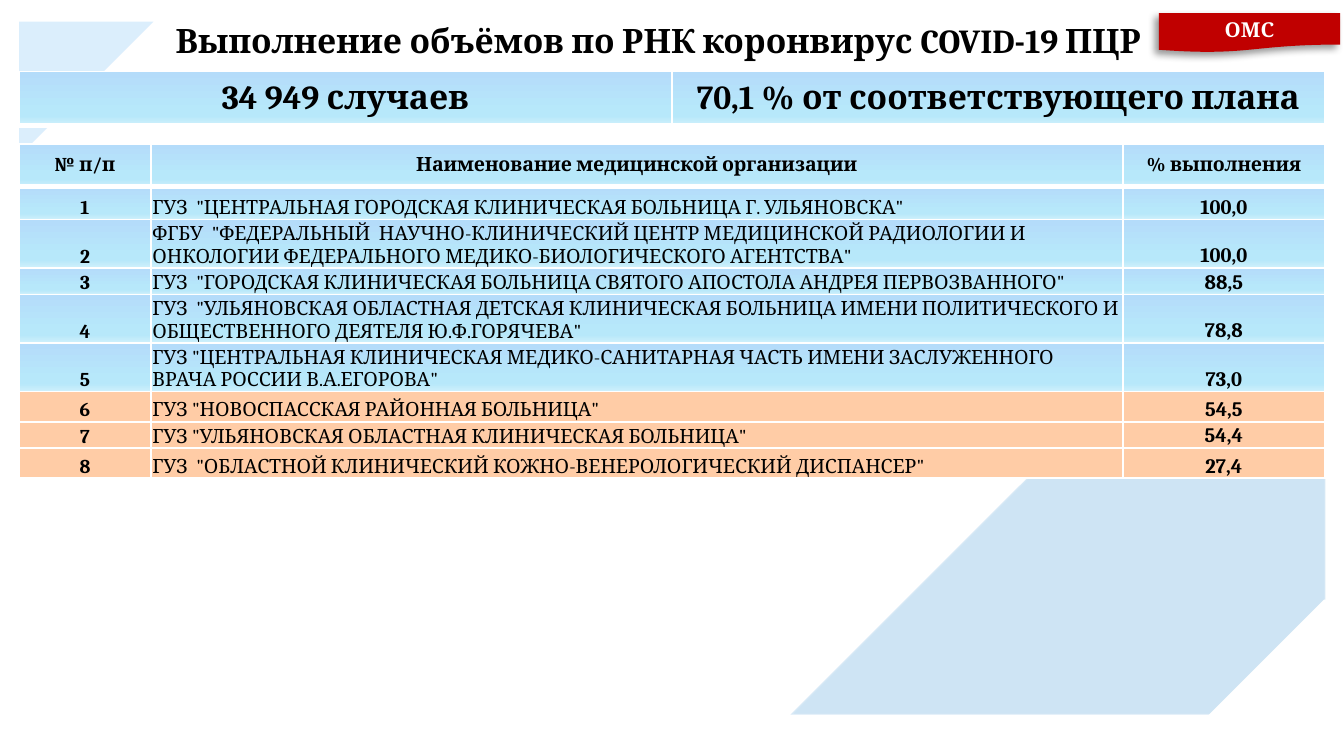
import pptx
import pptx.util
import pptx.dml.color
import pptx.enum.shapes
import pptx.enum.text
import pptx.oxml
import pptx.oxml.ns

Cm = pptx.util.Cm
SHAPE = pptx.enum.shapes.MSO_SHAPE
ANCHOR = pptx.enum.text.MSO_ANCHOR
ALIGN = pptx.enum.text.PP_ALIGN

FONT = "Cambria"
BLACK, WHITE, RED, ORANGE = "000000", "FFFFFF", "C00000", "FFCCA6"
BLUE_STOPS = [(0, "B4DCFA"), (74, "B7E8FA"), (83, "B7E8FA"), (100, "CFF0FB")]
LEFT = 0.36

TITLE = "Выполнение объёмов по РНК коронвирус COVID-19 ПЦР"
BADGE = "ОМС"
SUMMARY = ["34 949 случаев", "70,1 % от соответствующего плана"]
HEADER = ["№ п/п", "Наименование медицинской организации", "% выполнения"]
# name, percent, row height
CLINICS = [
    ('ГУЗ  "ЦЕНТРАЛЬНАЯ ГОРОДСКАЯ КЛИНИЧЕСКАЯ БОЛЬНИЦА Г. УЛЬЯНОВСКА"', "100,0", 0.62),
    ('ФГБУ  "ФЕДЕРАЛЬНЫЙ  НАУЧНО-КЛИНИЧЕСКИЙ ЦЕНТР МЕДИЦИНСКОЙ РАДИОЛОГИИ И '
     'ОНКОЛОГИИ ФЕДЕРАЛЬНОГО МЕДИКО-БИОЛОГИЧЕСКОГО АГЕНТСТВА"', "100,0", 0.91),
    ('ГУЗ  "ГОРОДСКАЯ КЛИНИЧЕСКАЯ БОЛЬНИЦА СВЯТОГО АПОСТОЛА АНДРЕЯ ПЕРВОЗВАННОГО"', "88,5", 0.48),
    ('ГУЗ  "УЛЬЯНОВСКАЯ ОБЛАСТНАЯ ДЕТСКАЯ КЛИНИЧЕСКАЯ БОЛЬНИЦА ИМЕНИ ПОЛИТИЧЕСКОГО И '
     'ОБЩЕСТВЕННОГО ДЕЯТЕЛЯ Ю.Ф.ГОРЯЧЕВА"', "78,8", 0.91),
    ('ГУЗ "ЦЕНТРАЛЬНАЯ КЛИНИЧЕСКАЯ МЕДИКО-САНИТАРНАЯ ЧАСТЬ ИМЕНИ ЗАСЛУЖЕННОГО '
     'ВРАЧА РОССИИ В.А.ЕГОРОВА"', "73,0", 0.91),
    ('ГУЗ "НОВОСПАССКАЯ РАЙОННАЯ БОЛЬНИЦА"', "54,5", 0.57),
    ('ГУЗ "УЛЬЯНОВСКАЯ ОБЛАСТНАЯ КЛИНИЧЕСКАЯ БОЛЬНИЦА"', "54,4", 0.48),
    ('ГУЗ  "ОБЛАСТНОЙ КЛИНИЧЕСКИЙ КОЖНО-ВЕНЕРОЛОГИЧЕСКИЙ ДИСПАНСЕР"', "27,4", 0.57),
]
FIRST_ORANGE = 6
# left, top, size, rotation, fill, opacity in percent, has outline
TRIANGLES = [
    (14.94, 3.4, 10.11, 270, "0D79CA", 20, True),
    (22.5, 11.35, 2.54, 270, WHITE, 100, True),
    (LEFT, 0.41, 2.54, 90, "4FADF3", 20, False),
]


def rgb(hex_color):
    return pptx.dml.color.RGBColor.from_string(hex_color)


def xml(text):
    """Parse one DrawingML element given without its namespace declaration."""
    head, rest = text.split(">", 1)
    slash = "/" if head.endswith("/") else ""
    ns = pptx.oxml.ns.nsdecls("a")
    return pptx.oxml.parse_xml(f"{head.rstrip('/')} {ns}{slash}>{rest}")


def write(tf, text, size, color=BLACK, bold=True, align=ALIGN.CENTER):
    p = tf.paragraphs[0]
    p.text = text
    p.alignment = align
    f = p.font
    f.name, f.size, f.bold = FONT, pptx.util.Pt(size), bold
    f.color.rgb = rgb(color)


def set_opacity(fill_format, percent):
    for clr in fill_format.iter(pptx.oxml.ns.qn("a:srgbClr")):
        clr.append(xml(f'<a:alpha val="{percent * 1000}"/>'))


def add_shape(shapes, kind, left, top, width, height, color):
    sp = shapes.add_shape(kind, Cm(left), Cm(top), Cm(width), Cm(height))
    sp.shadow.inherit = False
    sp.fill.solid()
    sp.fill.fore_color.rgb = rgb(color)
    sp.line.fill.background()
    return sp


def add_triangle(shapes, left, top, size, rotation, color, opacity, outlined):
    sp = add_shape(shapes, SHAPE.RIGHT_TRIANGLE, left, top, size, size, color)
    sp.rotation = rotation
    if outlined:
        sp.line.color.rgb = rgb(WHITE)
        sp.line.width = pptx.util.Pt(1.25)
    if opacity < 100:
        set_opacity(sp._element.spPr, opacity)


def add_table(shapes, top, widths, heights):
    table = shapes.add_table(len(heights), len(widths), Cm(LEFT), Cm(top),
                             Cm(sum(widths)), Cm(sum(heights))).table
    table.first_row = table.horz_banding = False
    for column, width in zip(table.columns, widths):
        column.width = Cm(width)
    for row, height in zip(table.rows, heights):
        row.height = Cm(height)
    return table


def style_cell(cell, anchor, color=None, margins=None, top=1, bottom=1):
    """Give white borders and a solid fill, or the blue gradient without a colour."""
    cell.vertical_anchor = anchor
    if margins:
        (cell.margin_left, cell.margin_top,
         cell.margin_right, cell.margin_bottom) = map(Cm, margins)
    tcPr = cell._tc.get_or_add_tcPr()
    for side, width in (("L", 1), ("R", 1), ("T", top), ("B", bottom)):
        tcPr.append(xml(f'<a:ln{side} w="{width * 12700}"><a:solidFill>'
                        f'<a:srgbClr val="{WHITE}"/></a:solidFill></a:ln{side}>'))
    if color:
        cell.fill.solid()
        cell.fill.fore_color.rgb = rgb(color)
    else:
        stops = "".join(f'<a:gs pos="{pos * 1000}"><a:srgbClr val="{c}"/></a:gs>'
                        for pos, c in BLUE_STOPS)
        tcPr.append(xml(f'<a:gradFill><a:gsLst>{stops}</a:gsLst>'
                        '<a:lin ang="5400000" scaled="0"/></a:gradFill>'))


def add_summary(shapes):
    table = add_table(shapes, 1.35, [12.34, 12.34], [1])
    for cell, text in zip(table.rows[0].cells, SUMMARY):
        write(cell.text_frame, text, 18)
        style_cell(cell, ANCHOR.MIDDLE, bottom=3)


def add_clinics(shapes):
    wide, narrow = (0.18, 0, 0.18, 0), (0.03, 0.03, 0.03, 0)
    heights = [0.81] + [height for *_, height in CLINICS]
    table = add_table(shapes, 2.72, [2.49, 18.37, 3.82], heights)
    for cell, text in zip(table.rows[0].cells, HEADER):
        write(cell.text_frame, text, 10.5)
        style_cell(cell, ANCHOR.MIDDLE, margins=wide, bottom=3)
    for i, (name, percent, _) in enumerate(CLINICS, 1):
        color = ORANGE if i >= FIRST_ORANGE else None
        number_cell, name_cell, percent_cell = table.rows[i].cells
        write(number_cell.text_frame, str(i), 10.5)
        write(name_cell.text_frame, name, 10.5, bold=False, align=ALIGN.LEFT)
        write(percent_cell.text_frame, percent, 11)
        for cell, margins in ((number_cell, wide), (name_cell, narrow), (percent_cell, narrow)):
            style_cell(cell, ANCHOR.BOTTOM, color, margins, top=3 if i == 1 else 1)


def add_title(shapes):
    tf = shapes.add_textbox(Cm(2.9), Cm(0.1), Cm(19.1), Cm(1.17)).text_frame
    tf.word_wrap = True
    tf.vertical_anchor = ANCHOR.BOTTOM
    write(tf, TITLE, 18)


def add_badge(shapes):
    sp = add_shape(shapes, SHAPE.FLOWCHART_DOCUMENT, 21.9, 0.25, 3.43, 0.74, RED)
    effects = sp._element.spPr.find(pptx.oxml.ns.qn("a:effectLst"))
    effects.append(xml('<a:outerShdw blurRad="50800" dist="38100" dir="8100000">'
                       f'<a:srgbClr val="{BLACK}"><a:alpha val="40000"/></a:srgbClr>'
                       '</a:outerShdw>'))
    tf = sp.text_frame
    tf.margin_left = tf.margin_right = Cm(0.18)
    tf.margin_top = tf.margin_bottom = Cm(0.08)
    tf.vertical_anchor = ANCHOR.MIDDLE
    write(tf, BADGE, 11, WHITE)


def main():
    prs = pptx.Presentation()
    prs.slide_width, prs.slide_height = Cm(25.4), Cm(14.29)
    shapes = prs.slides.add_slide(prs.slide_layouts[6]).shapes
    for triangle in TRIANGLES:
        add_triangle(shapes, *triangle)
    add_title(shapes)
    add_summary(shapes)
    add_clinics(shapes)
    add_badge(shapes)
    prs.save("out.pptx")


if __name__ == "__main__":
    main()
